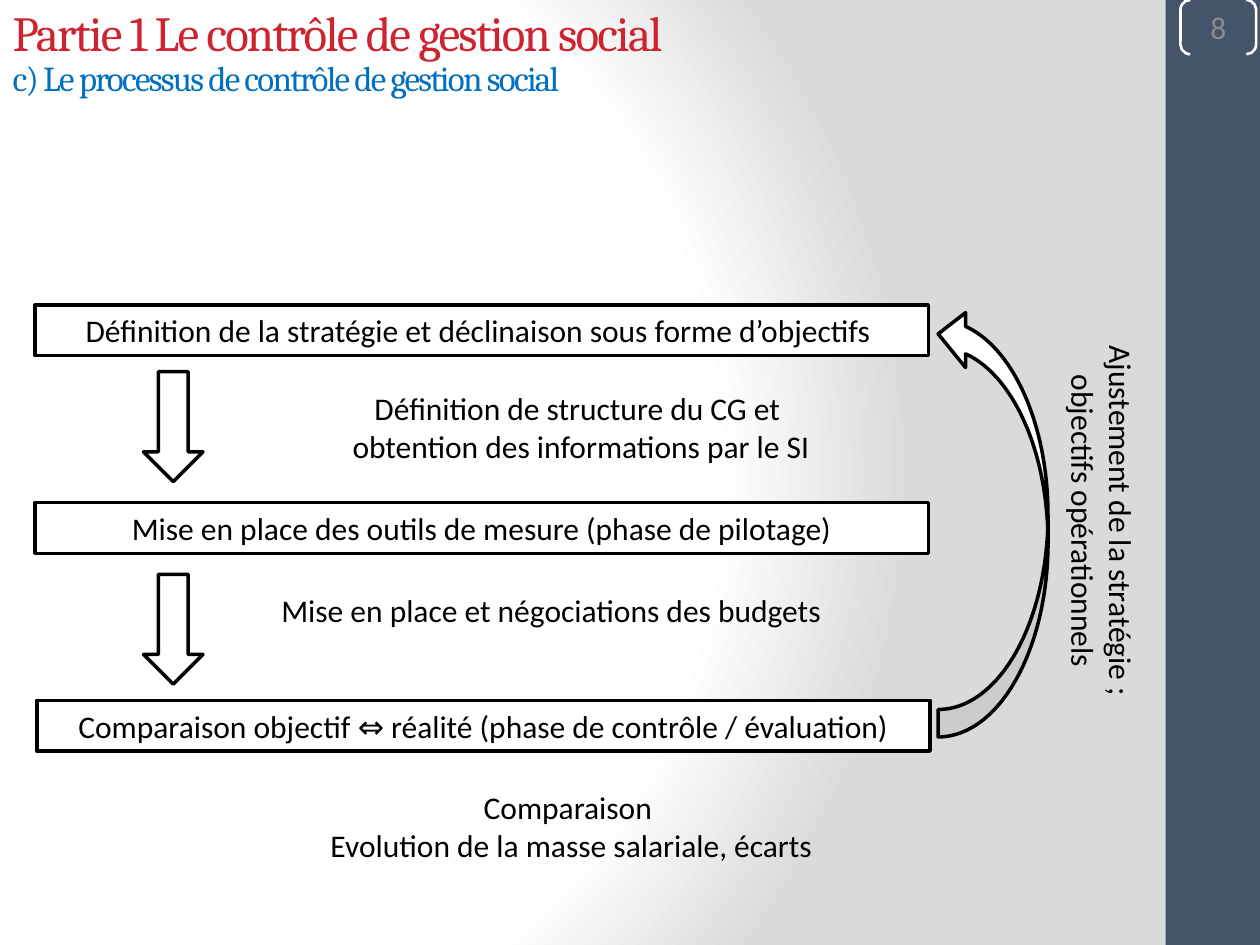
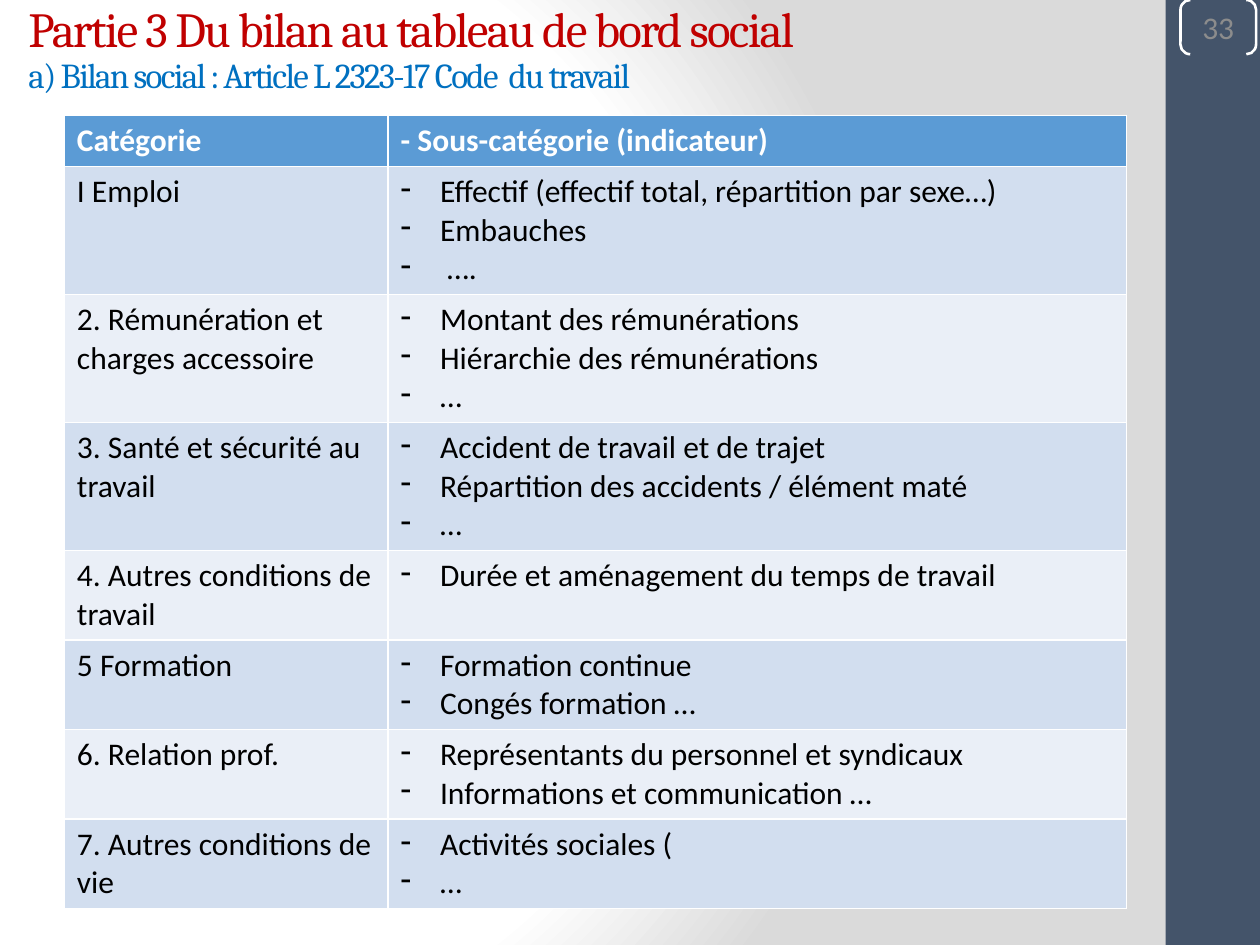
from lxml import etree
from pptx import Presentation
from pptx.dml.color import RGBColor
from pptx.enum.shapes import MSO_SHAPE
from pptx.enum.text import MSO_ANCHOR, MSO_AUTO_SIZE, PP_ALIGN
from pptx.oxml import parse_xml
from pptx.oxml.ns import qn
from pptx.util import Pt

WHITE = RGBColor(0xFF, 0xFF, 0xFF)
BLACK = RGBColor(0x00, 0x00, 0x00)
SLATE = RGBColor(0x44, 0x54, 0x6A)
GREY = RGBColor(0x8C, 0x8C, 0x8C)
RED = RGBColor(0xCE, 0x24, 0x30)
DARK_RED = RGBColor(0xC0, 0x00, 0x00)
BLUE = RGBColor(0x00, 0x70, 0xC0)
HEADER_BLUE = RGBColor(0x5B, 0x9B, 0xD5)
BAND_FILLS = (RGBColor(0xD2, 0xDE, 0xEF), RGBColor(0xEA, 0xEF, 0xF7))

RECTANGLE = MSO_SHAPE.RECTANGLE
BRACKETS = MSO_SHAPE.DOUBLE_BRACKET
DOWN_ARROW = MSO_SHAPE.DOWN_ARROW
CURVED_ARROW = MSO_SHAPE.CURVED_UP_ARROW
LEFT, CENTER = PP_ALIGN.LEFT, PP_ALIGN.CENTER
TOP, MIDDLE = MSO_ANCHOR.TOP, MSO_ANCHOR.MIDDLE
NO_FIT = MSO_AUTO_SIZE.NONE
TITLE_ONLY = 5

BACKGROUND = """
<a:gradFill xmlns:a="http://schemas.openxmlformats.org/drawingml/2006/main" rotWithShape="1">
  <a:gsLst>
    <a:gs pos="0"><a:srgbClr val="FFFFFF"/></a:gs>
    <a:gs pos="75000"><a:srgbClr val="FFFFFF"/></a:gs>
    <a:gs pos="100000"><a:srgbClr val="DADADA"/></a:gs>
  </a:gsLst>
  <a:path path="circle"><a:fillToRect l="20000" t="50000" r="100000" b="50000"/></a:path>
</a:gradFill>"""


def write(para, text, size=18, font="Calibri", color=BLACK, bold=False,
          align=LEFT, spacing=None, indent=0, bullet=None):
    """Put one formatted run of text into a paragraph."""
    props = para._p.get_or_add_pPr()
    if bullet:
        props.set("marL", str(Pt(22.5)))
        props.set("indent", str(-Pt(22.5)))
        etree.SubElement(props, qn("a:buChar")).set("char", bullet)
    elif indent:
        props.set("marL", str(Pt(indent)))
    para.alignment = align
    span = para.add_run()
    span.text = text
    span.font.name, span.font.size = font, Pt(size)
    span.font.bold = bold
    span.font.color.rgb = color
    if spacing:
        span.font._element.set("spc", str(spacing))


class Pages:
    """Shared style and the slide being drawn; all lengths in points."""

    def __init__(self):
        self.deck = Presentation()
        self.deck.slide_width, self.deck.slide_height = Pt(720), Pt(540)
        fill = self.deck.slide_master.background.fill
        fill.gradient()
        props = self.deck.slide_master.element.cSld.bg.bgPr
        props.replace(props.find(qn("a:gradFill")), parse_xml(BACKGROUND))
        self.page = None

    def new_page(self, number, title, subtitle, top, color, indent=0):
        self.page = self.deck.slides.add_slide(self.deck.slide_layouts[TITLE_ONLY])
        # Side band and page number
        self.shape(RECTANGLE, 666, 0, 54, 540, fill=SLATE)
        badge = self.shape(BRACKETS, 674.6, 0, 43.2, 31, line=WHITE, line_width=1.5)
        badge.adjustments[0] = 0.18
        self.fill_text(badge, [number], anchor=MIDDLE, inset=0,
                       color=GREY, align=CENTER)
        # Title with its subtitle
        box = self.page.shapes.title
        box.left, box.top, box.width, box.height = Pt(0), Pt(top), Pt(600), Pt(44.6)
        frame = box.text_frame
        frame.auto_size, frame.vertical_anchor = NO_FIT, MIDDLE
        write(frame.paragraphs[0], title, size=28, font="Cambria", color=color,
              spacing=-100, indent=indent)
        write(frame.add_paragraph(), subtitle, size=20, font="Cambria",
              color=BLUE, spacing=-100)
        for para in frame.paragraphs:
            para.line_spacing = 0.9

    def shape(self, kind, left, top, width, height, fill=None, line=None, line_width=2):
        shape = self.page.shapes.add_shape(
            kind, Pt(left), Pt(top), Pt(width), Pt(height))
        shape.shadow.inherit = False
        if fill is None:
            shape.fill.background()
        else:
            shape.fill.solid()
            shape.fill.fore_color.rgb = fill
        if line is None:
            shape.line.fill.background()
        else:
            shape.line.color.rgb = line
            shape.line.width = Pt(line_width)
        return shape

    def fill_text(self, box, lines, anchor=TOP, inset=None, **style):
        frame = box.text_frame
        frame.word_wrap, frame.vertical_anchor = True, anchor
        if inset is not None:
            frame.margin_left = frame.margin_right = Pt(inset)
            frame.margin_top = frame.margin_bottom = Pt(inset)
        for index, text in enumerate(lines):
            para = frame.add_paragraph() if index else frame.paragraphs[0]
            write(para, text, **style)

    def step(self, left, top, text):
        box = self.shape(RECTANGLE, left, top, 510.5, 29, fill=WHITE, line=BLACK)
        self.fill_text(box, [text], align=CENTER)

    def arrow(self, kind, left, top, width, height, rotation=0):
        arrow = self.shape(kind, left, top, width, height, fill=WHITE, line=BLACK)
        arrow.rotation = rotation

    def note(self, left, top, width, height, lines, vertical=False):
        box = self.page.shapes.add_textbox(Pt(left), Pt(top), Pt(width), Pt(height))
        if vertical:
            box.element.txBody.bodyPr.set("vert", "vert")
        self.fill_text(box, lines, align=CENTER)

    def table(self, left, top, widths, row_height, header, rows):
        table = self.page.shapes.add_table(
            len(rows) + 1, len(widths), Pt(left), Pt(top),
            Pt(sum(widths)), Pt(row_height * (len(rows) + 1))).table
        for column, width in zip(table.columns, widths):
            column.width = Pt(width)
        for column, text in enumerate(header):
            self.cell(table.cell(0, column), [text], HEADER_BLUE,
                      color=WHITE, bold=True)
        for row, (category, items) in enumerate(rows, 1):
            fill = BAND_FILLS[(row - 1) % 2]
            self.cell(table.cell(row, 0), [category], fill)
            self.cell(table.cell(row, 1), items, fill, bullet="-")

    def cell(self, cell, lines, fill, **style):
        cell.fill.solid()
        cell.fill.fore_color.rgb = fill
        self.fill_text(cell, lines, **style)


def draw_process(pages):
    pages.new_page("8", "Partie 1 Le contrôle de gestion social",
                   "c) Le processus de contrôle de gestion social", 8.6, RED)
    # Steps from top to bottom
    steps = [
        (20, "Définition de la stratégie et déclinaison sous forme d’objectifs "),
        (20, "Mise en place des outils de mesure (phase de pilotage)"),
        (21, "Comparaison objectif ⇔ réalité (phase de contrôle / évaluation)"),
    ]
    for index, (left, text) in enumerate(steps):
        pages.step(left, 174.2 + 113 * index, text)
    # Arrows down and back up
    for top in (212.4, 328.2):
        pages.arrow(DOWN_ARROW, 82, top, 34, 62.8)
    pages.arrow(CURVED_ARROW, 444.5, 266.7, 246, 62.8, rotation=270)
    # Notes beside the arrows
    pages.note(597, 174.2, 58.3, 247, [
        "Ajustement de la stratégie ; objectifs opérationnels"], vertical=True)
    pages.note(133, 218.8, 398, 51, ["Définition de structure du CG et ",
                                     "obtention des informations par le SI"])
    pages.note(116, 334, 398, 29, ["Mise en place et négociations des budgets"])
    pages.note(127.5, 447, 398, 51, ["Comparaison ",
                                     "Evolution de la masse salariale, écarts"])


def draw_social_report(pages):
    pages.new_page("33", "Partie 3 Du bilan au tableau de bord social",
                   "a) Bilan social : Article L 2323-17 Code  du travail",
                   6.5, DARK_RED, indent=9)
    # Categories with their indicators
    pages.table(36.8, 66, (185, 422), 29.2,
                ("Catégorie", "- Sous-catégorie (indicateur)"), [
        ("I Emploi", ["Effectif (effectif total, répartition par sexe…)",
                      "Embauches", " …."]),
        ("2. Rémunération et charges accessoire", [
            "Montant des rémunérations", "Hiérarchie des rémunérations", "…"]),
        ("3. Santé et sécurité au travail", [
            "Accident de travail et de trajet",
            "Répartition des accidents / élément maté", "…"]),
        ("4. Autres conditions de travail", [
            "Durée et aménagement du temps de travail"]),
        ("5 Formation", ["Formation continue", "Congés formation …"]),
        ("6. Relation prof.", ["Représentants du personnel et syndicaux",
                               "Informations et communication …"]),
        ("7. Autres conditions de vie", ["Activités sociales (", "…"]),
    ])


def main():
    pages = Pages()
    draw_process(pages)
    draw_social_report(pages)
    pages.deck.save("out.pptx")


if __name__ == "__main__":
    main()
